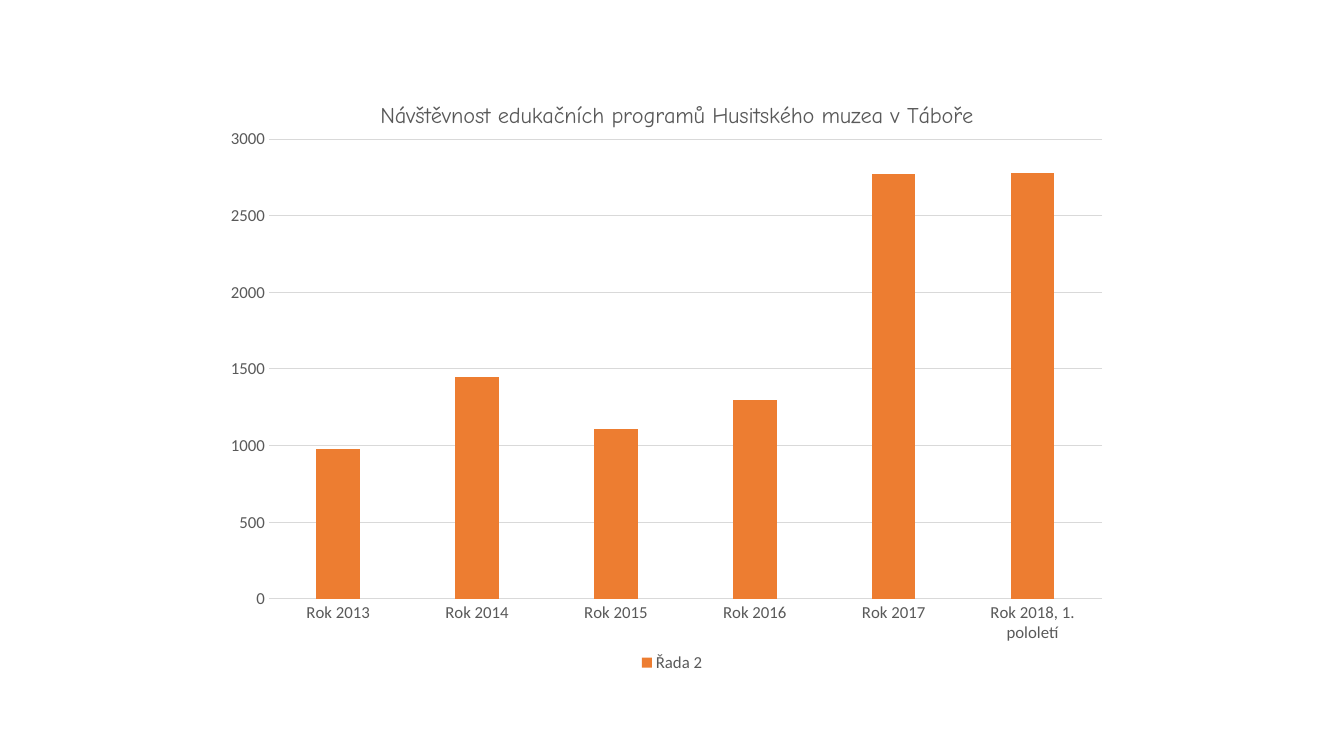
from lxml.etree import SubElement
from pptx import Presentation
from pptx.chart.data import CategoryChartData
from pptx.dml.color import RGBColor
from pptx.enum.chart import XL_CHART_TYPE, XL_LEGEND_POSITION, XL_TICK_MARK
from pptx.oxml.ns import qn
from pptx.util import Inches, Pt

ORANGE = RGBColor(0xED, 0x7D, 0x31)
GRAY = RGBColor(0x59, 0x59, 0x59)
PALE = RGBColor(0xD9, 0xD9, 0xD9)
WIDTH, HEIGHT = Inches(13.33), Inches(7.5)

VISITS = {
    "Rok 2013": 980,
    "Rok 2014": 1450,
    "Rok 2015": 1110,
    "Rok 2016": 1300,
    "Rok 2017": 2770,
    "Rok 2018, 1. pololetí": 2780,
}


def style(font, size=12, name="Calibri", color=GRAY, bold=False):
    """Set the look of a font."""
    font.size, font.name, font.bold = Pt(size), name, bold
    font.color.rgb = color


def write(frame, text, **form):
    """Put formatted text into a frame."""
    frame.text = text
    style(frame.paragraphs[0].runs[0].font, **form)


def place(node, **parts):
    """Fix a chart part at shares of the chart's size."""
    lay = node.find(qn("c:layout"))
    if lay is None:
        lay = node.makeelement(qn("c:layout"))
        node.insert(0, lay)
    box = SubElement(lay, qn("c:manualLayout"))
    for tag, value in parts.items():
        SubElement(box, qn(f"c:{tag}")).set("val", str(value))


class Deck:
    """Hold the chart style and the current slide."""

    def __init__(self):
        """Start a deck with one blank slide."""
        self.file = Presentation()
        self.file.slide_width, self.file.slide_height = WIDTH, HEIGHT
        self.slide = self.file.slides.add_slide(self.file.slide_layouts[6])

    def bars(self, name, values, left, top, wide, high):
        """Add a column chart at shares of the slide's size."""
        data = CategoryChartData()
        data.categories = list(values)
        data.add_series(name, list(values.values()))
        chart = self.slide.shapes.add_chart(
            XL_CHART_TYPE.COLUMN_CLUSTERED,
            int(WIDTH * left), int(HEIGHT * top),
            int(WIDTH * wide), int(HEIGHT * high), data).chart
        style(chart.font)
        plot = chart.plots[0]
        plot.vary_by_categories = False
        plot.gap_width, plot.overlap = 219, -27
        fill = plot.series[0].format.fill
        fill.solid()
        fill.fore_color.rgb = ORANGE
        place(chart.element.xpath("c:chart/c:plotArea")[0],
              layoutTarget="inner", xMode="edge", yMode="edge",
              x=0.05, y=0.1, w=0.93, h=0.77)
        return chart

    def axes(self, chart, peak, step):
        """Format both axes and the grid."""
        for axis in (chart.category_axis, chart.value_axis):
            axis.major_tick_mark = axis.minor_tick_mark = XL_TICK_MARK.NONE
            style(axis.tick_labels.font)
        scale = chart.value_axis
        scale.minimum_scale, scale.maximum_scale = 0, peak
        scale.major_unit = step
        scale.format.line.fill.background()
        for line in (chart.category_axis.format.line,
                     scale.major_gridlines.format.line):
            line.color.rgb, line.width = PALE, Pt(0.75)

    def title(self, chart, text, x, y):
        """Head the chart at shares of its size."""
        write(chart.chart_title.text_frame, text, size=16, name="Comic Neue")
        place(chart.element.xpath("c:chart/c:title")[0],
              xMode="edge", yMode="edge", x=x, y=y)

    def legend(self, chart):
        """Show the legend below the columns."""
        chart.has_legend = True
        chart.legend.position = XL_LEGEND_POSITION.BOTTOM
        chart.legend.include_in_layout = False
        style(chart.legend.font)


def main():
    """Build the slide of visits."""
    deck = Deck()
    chart = deck.bars("Řada 2", VISITS, 1 / 6, 0.105, 2 / 3, 0.79)
    deck.axes(chart, 3000, 500)
    deck.title(chart, "Návštěvnost edukačních programů Husitského muzea v Táboře",
               0.17, 0.03)
    deck.legend(chart)
    deck.file.save("out.pptx")


if __name__ == "__main__":
    main()
